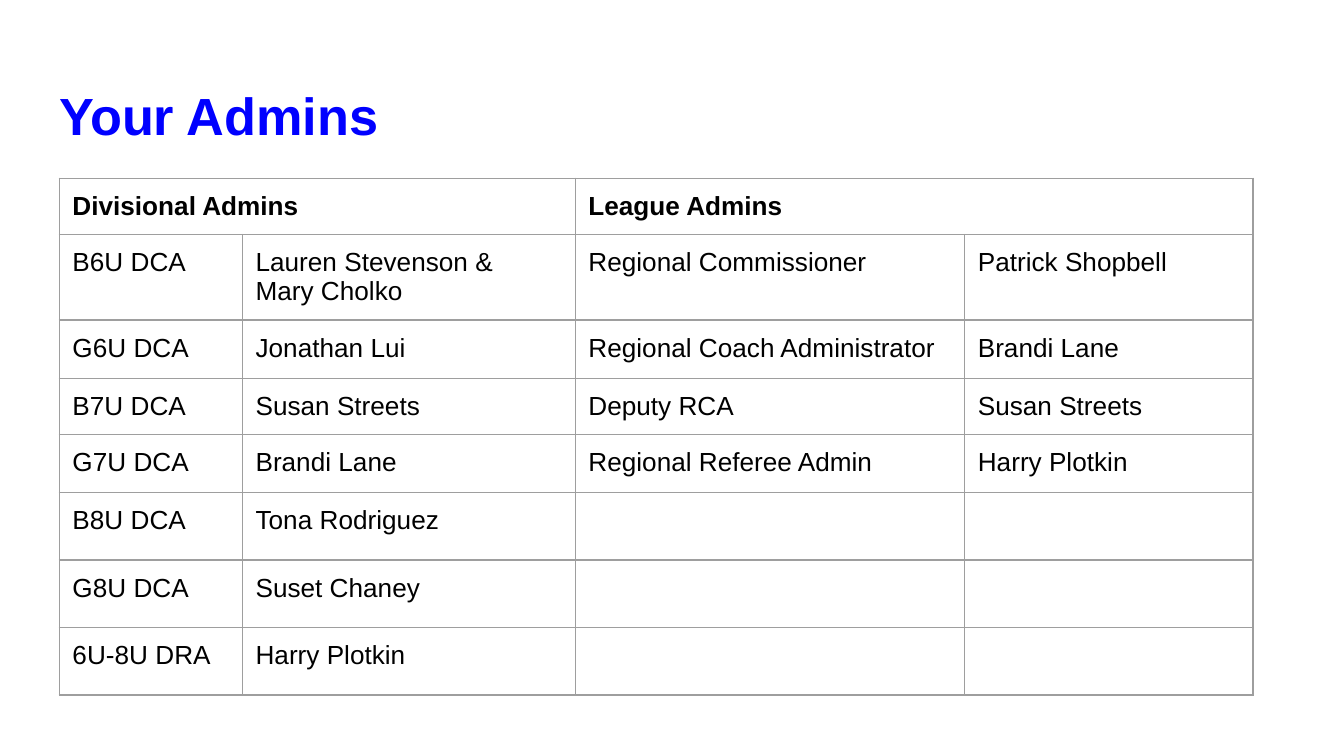
from lxml import etree
from pptx import Presentation
from pptx.dml.color import RGBColor
from pptx.enum.text import MSO_ANCHOR, MSO_AUTO_SIZE, PP_ALIGN
from pptx.oxml.ns import qn
from pptx.util import Cm, Pt

TOP = MSO_ANCHOR.TOP
NO_AUTOFIT = MSO_AUTO_SIZE.NONE
LEFT = PP_ALIGN.LEFT

COLORS = {"title": "0000FF", "text": "000000", "grid": "9E9E9E"}
FONT = "Arial"
INSET = Cm(0.25)


def add_run(paragraph, text, size, color, bold=False):
    run = paragraph.add_run()
    run.text = text
    run.font.name = FONT
    run.font.size = Pt(size)
    run.font.bold = bold
    run.font.color.rgb = RGBColor.from_string(COLORS[color])


def add_borders(cell):
    properties = cell._tc.get_or_add_tcPr()
    for position, side in enumerate(("a:lnL", "a:lnR", "a:lnT", "a:lnB")):
        line = etree.Element(qn(side), w=str(Pt(0.75)))
        fill = etree.SubElement(line, qn("a:solidFill"))
        etree.SubElement(fill, qn("a:srgbClr"), val=COLORS["grid"])
        properties.insert(position, line)


prs = Presentation()
prs.slide_width = Cm(25.4)
prs.slide_height = Cm(14.29)
slide = prs.slides.add_slide(prs.slide_layouts[5])

heading = slide.shapes.title
heading.left, heading.top = Cm(0.87), Cm(1.24)
heading.width, heading.height = Cm(23.67), Cm(1.6)
heading_frame = heading.text_frame
heading_frame.auto_size = NO_AUTOFIT
heading_frame.vertical_anchor = TOP
heading_frame.margin_left = heading_frame.margin_right = INSET
heading_frame.margin_top, heading_frame.margin_bottom = Cm(0.34), INSET
heading_frame.paragraphs[0].alignment = LEFT
add_run(heading_frame.paragraphs[0], "Your Admins", 28, "title", True)

admin_rows = [
    ("Divisional Admins", "", "League Admins", ""),
    ("B6U DCA", "Lauren Stevenson &\nMary Cholko", "Regional Commissioner", "Patrick Shopbell"),
    ("G6U DCA", "Jonathan Lui", "Regional Coach Administrator", "Brandi Lane"),
    ("B7U DCA", "Susan Streets", "Deputy RCA", "Susan Streets"),
    ("G7U DCA", "Brandi Lane", "Regional Referee Admin", "Harry Plotkin"),
    ("B8U DCA", "Tona Rodriguez", "", ""),
    ("G8U DCA", "Suset Chaney", "", ""),
    ("6U-8U DRA", "Harry Plotkin", "", ""),
]
column_widths = [3.46, 6.29, 7.36, 5.45]
row_heights = [1.06, 1.62, 1.1, 1.06, 1.1, 1.22, 1.22, 1.22]

admins = slide.shapes.add_table(
    len(admin_rows), len(column_widths), Cm(1.12), Cm(3.37),
    Cm(sum(column_widths)), Cm(sum(row_heights)),
).table
admins.first_row = False
admins.horz_banding = False
for column, width in zip(admins.columns, column_widths):
    column.width = Cm(width)
for row, height in zip(admins.rows, row_heights):
    row.height = Cm(height)
for first in (0, 2):
    admins.cell(0, first).merge(admins.cell(0, first + 1))

for row_index, entries in enumerate(admin_rows):
    for column_index, entry in enumerate(entries):
        cell = admins.cell(row_index, column_index)
        cell.fill.background()
        add_borders(cell)
        cell.vertical_anchor = TOP
        cell.margin_left = cell.margin_right = INSET
        cell.margin_top = cell.margin_bottom = INSET
        if not entry:
            continue
        paragraph = cell.text_frame.paragraphs[0]
        for line_index, text in enumerate(entry.split("\n")):
            if line_index:
                paragraph.add_line_break()
            add_run(paragraph, text, 14, "text", row_index == 0)

prs.save("out.pptx")
